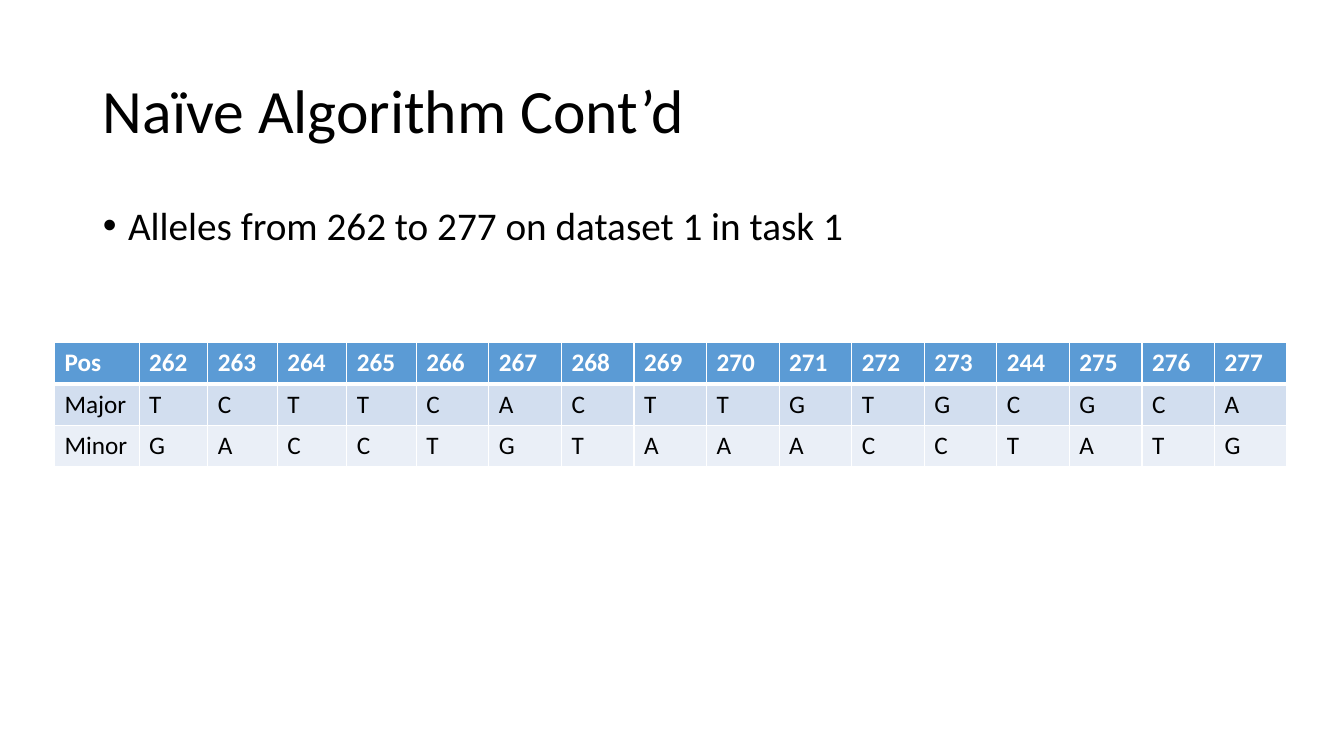
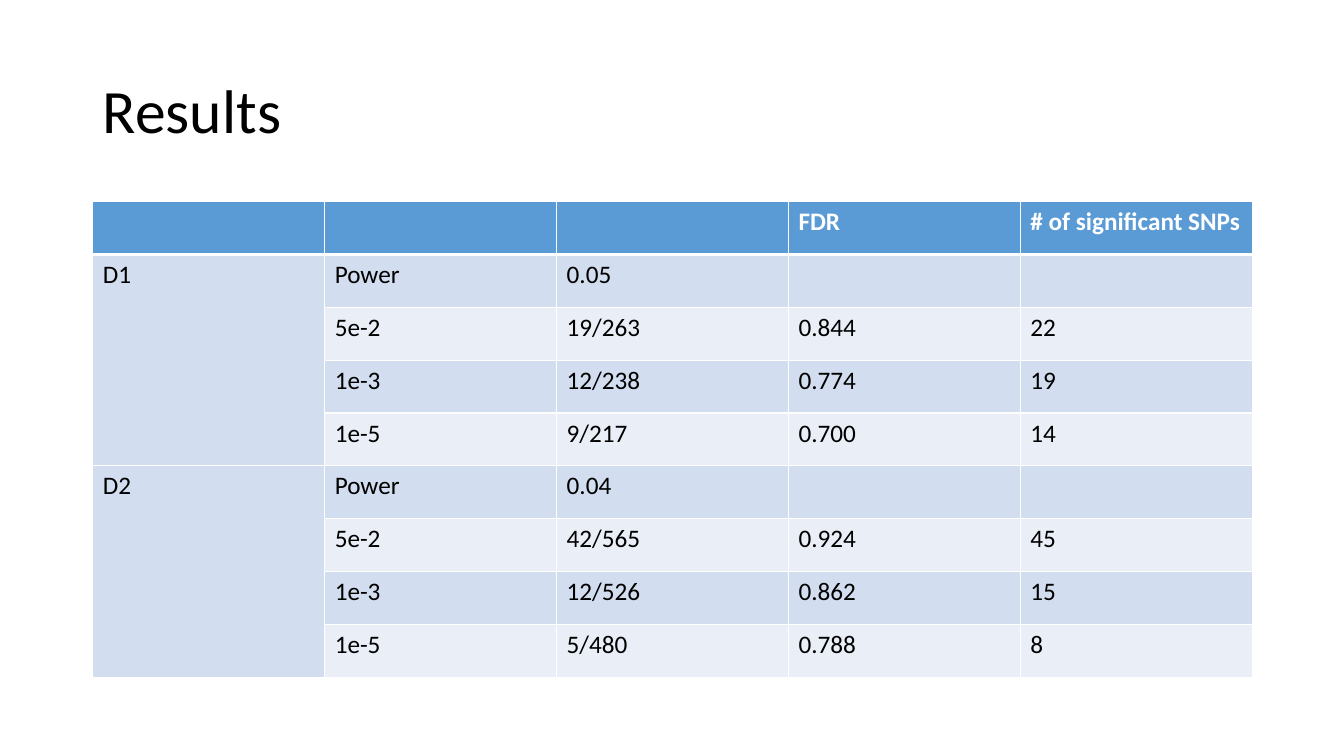
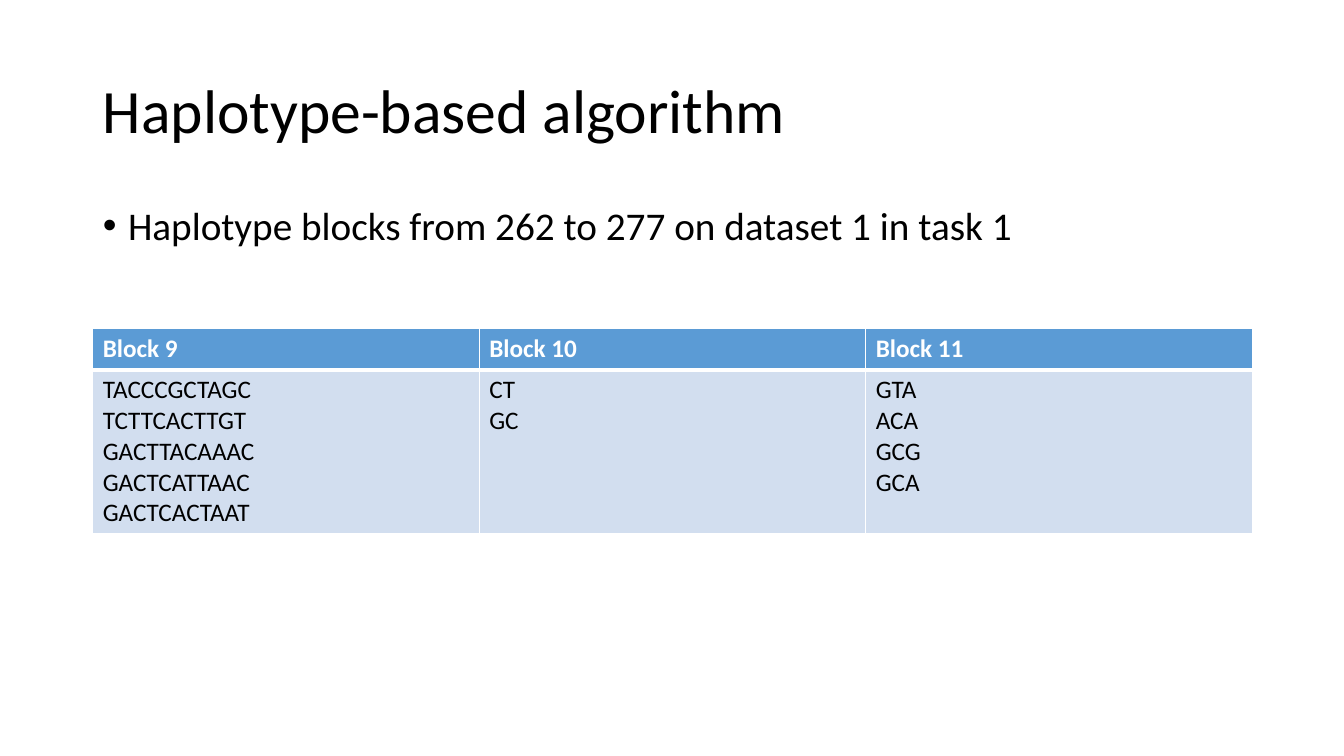
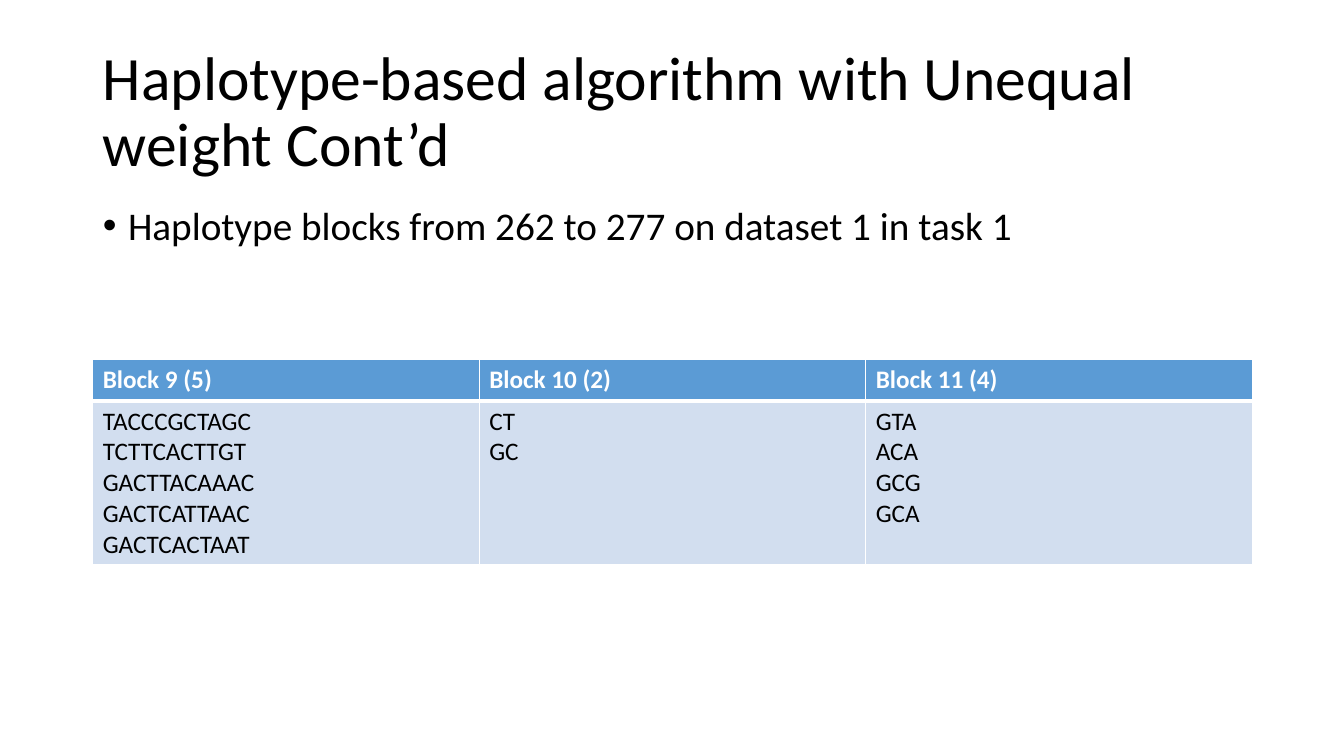
from lxml.etree import SubElement as Sub
from pptx import Presentation
from pptx.dml.color import RGBColor as Rgb
from pptx.enum.text import MSO_ANCHOR as Anchor, MSO_AUTO_SIZE as Fit, PP_ALIGN as Align
from pptx.oxml.ns import qn
from pptx.util import Inches, Pt

# Shared look
WIDE, HIGH = 13.33, 7.5
LEFT, SPAN = 0.92, 11.5
TITLE = (LEFT, 0.4, SPAN, 1.45)
BODY = (LEFT, 2, SPAN, 4.76)
FONT = "Calibri"
HUE = {"ink": "000000", "paper": "FFFFFF", "head": "5B9BD5",
       "odd": "D2DEEF", "even": "EAEFF7"}

# Content
BLOCKS = [
    ["TACCCGCTAGC", "TCTTCACTTGT", "GACTTACAAAC", "GACTCATTAAC", "GACTCACTAAT"],
    ["CT", "GC"],
    ["GTA", "ACA", "GCG", "GCA"],
]
SITES = "262 263 264 265 266 267 268 269 270 271 272 273 244 275 276 277"
THIRDS = [SPAN / 3] * 3
SLIDES = [
    {
        "title": "Naïve Algorithm Cont’d",
        "list": ["Alleles from 262 to 277 on dataset 1 in task 1"],
        "deep": 1.4,
        "at": (0.54, 3.4),
        "cols": [0.84, 0.68, 0.69, 0.69, 0.69] + [0.72] * 12,
        "tall": [0.41] * 3,
        "rows": [
            ["Pos", *SITES.split()],
            ["Major", *"TCTTCACTTGTGCGCA"],
            ["Minor", *"GACCTGTAAACCTATG"],
        ],
    },
    {
        "title": "Results",
        "at": (LEFT, 2),
        "cols": [SPAN / 5] * 5,
        "tall": [4.72 / 9] * 9,
        "merge": [(1, 4), (5, 8)],
        "rows": [
            ["", "", "", "FDR", "# of significant SNPs"],
            ["D1", "Power", "0.05", "", ""],
            ["", "5e-2", "19/263", "0.844", "22"],
            ["", "1e-3", "12/238", "0.774", "19"],
            ["", "1e-5", "9/217", "0.700", "14"],
            ["D2", "Power", "0.04", "", ""],
            ["", "5e-2", "42/565", "0.924", "45"],
            ["", "1e-3", "12/526", "0.862", "15"],
            ["", "1e-5", "5/480", "0.788", "8"],
        ],
    },
    {
        "title": "Haplotype-based algorithm",
        "list": ["Haplotype blocks from 262 to 277 on dataset 1 in task 1"],
        "at": (LEFT, 3.26),
        "cols": THIRDS,
        "tall": [0.41, 1.6],
        "rows": [["Block 9", "Block 10", "Block 11"], BLOCKS],
    },
    {
        "title": "Haplotype-based algorithm with Unequal weight Cont’d",
        "list": ["Haplotype blocks from 262 to 277 on dataset 1 in task 1"],
        "at": (LEFT, 3.57),
        "cols": THIRDS,
        "tall": [0.41, 1.6],
        "rows": [["Block 9 (5)", "Block 10 (2)", "Block 11 (4)"], BLOCKS],
    },
]


def place(shape, box):
    shape.left, shape.top, shape.width, shape.height = map(Inches, box)


def put(frame, text, size=18, hue="ink", bold=False, line=1.0, gap=0, dot=False):
    """Write one line, or a list of lines, as formatted paragraphs."""
    lines = [text] if isinstance(text, str) else text
    for num, words in enumerate(lines):
        para = frame.add_paragraph() if num else frame.paragraphs[0]
        para.alignment = Align.LEFT
        para.line_spacing, para.space_before = line, Pt(gap)
        if dot:
            props = para._p.get_or_add_pPr()
            props.set("marL", str(Inches(0.25)))
            props.set("indent", str(-Inches(0.25)))
            Sub(props, qn("a:buFont"), typeface="Arial")
            Sub(props, qn("a:buChar"), char="•")
        if words:
            run = para.add_run()
            run.text = words
            font = run.font
            font.name, font.size, font.bold = FONT, Pt(size), bold
            font.color.rgb = Rgb.from_string(HUE[hue])


def edge(cell, **widths):
    """Draw white cell borders; widths are points by side."""
    props = cell._tc.get_or_add_tcPr()
    for side in "LRTB":
        rule = Sub(props, qn("a:ln" + side), w=str(Pt(widths.get(side, 1))))
        Sub(Sub(rule, qn("a:solidFill")), qn("a:srgbClr"), val=HUE["paper"])


def grid(slide, at, cols, tall, rows, merge=()):
    box = map(Inches, (*at, sum(cols), sum(tall)))
    table = slide.shapes.add_table(len(rows), len(cols), *box).table
    for col, wide in zip(table.columns, cols):
        col.width = Inches(wide)
    for r, (row, high) in enumerate(zip(rows, tall)):
        table.rows[r].height = Inches(high)
        tone = "head" if r == 0 else "odd" if r % 2 else "even"
        for c, text in enumerate(row):
            cell = table.cell(r, c)
            edge(cell, B=1 if r else 3, T=3 if r == 1 else 1)
            cell.fill.solid()
            cell.fill.fore_color.rgb = Rgb.from_string(HUE[tone])
            put(cell.text_frame, text, hue="ink" if r else "paper", bold=r == 0)
    for first, last in merge:
        table.cell(first, 0).merge(table.cell(last, 0))


def main():
    deck = Presentation()
    deck.slide_width, deck.slide_height = Inches(WIDE), Inches(HIGH)
    full, bare = deck.slide_layouts[1], deck.slide_layouts[5]

    # Title and body areas, set once on the layouts
    for layout in (full, bare):
        for hold in layout.placeholders:
            spot = {0: TITLE, 1: BODY}.get(hold.placeholder_format.idx)
            if spot:
                place(hold, spot)
                hold.text_frame.auto_size = Fit.NONE
                hold.text_frame.vertical_anchor = Anchor.TOP if spot is BODY else Anchor.MIDDLE

    # Slides
    for page in SLIDES:
        slide = deck.slides.add_slide(full if "list" in page else bare)
        put(slide.shapes.title.text_frame, page["title"], size=44, line=0.9)
        if "list" in page:
            body = slide.placeholders[1]
            if "deep" in page:
                place(body, (*BODY[:3], page["deep"]))
            put(body.text_frame, page["list"], size=28, line=0.9, gap=10, dot=True)
        grid(slide, page["at"], page["cols"], page["tall"], page["rows"],
             page.get("merge", ()))
    deck.save("out.pptx")


if __name__ == "__main__":
    main()
